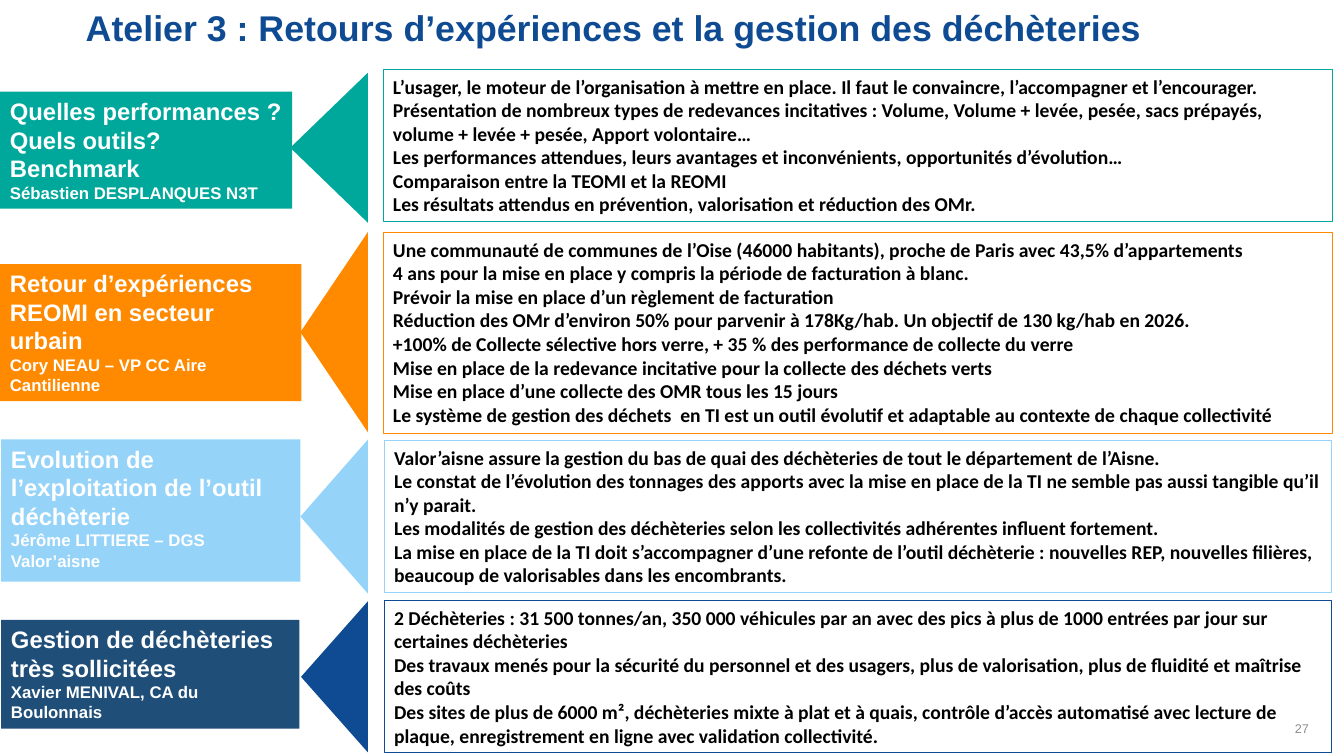
from copy import deepcopy
from pptx import Presentation
from pptx.dml.color import RGBColor as RGB
from pptx.enum.shapes import MSO_SHAPE as KIND
from pptx.enum.text import MSO_ANCHOR as ANCHOR, MSO_AUTO_SIZE as FIT, PP_ALIGN as ALIGN
from pptx.oxml.ns import qn
from pptx.util import Inches, Pt

WIDE, HIGH = Inches(13.33), Inches(7.5)

TEAL = RGB(0x00, 0xA8, 0x9C)
ORANGE = RGB(0xFF, 0x8A, 0x00)
SKY = RGB(0x95, 0xD3, 0xF9)
BLUE = RGB(0x0F, 0x4B, 0x93)
NAVY = RGB(0x1F, 0x4E, 0x79)
WHITE = RGB(0xFF, 0xFF, 0xFF)
BLACK = RGB(0x00, 0x00, 0x00)
GREY = RGB(0x8C, 0x8C, 0x8C)

TITLE = dict(name="Arial", size=Pt(25.5), bold=True)
TOPIC = dict(name="Arial", size=Pt(17), bold=True)
GUEST = dict(name="Arial", size=Pt(12), bold=True)
POINT = dict(name="Calibri", size=Pt(14), bold=True)
FOLIO = dict(name="Arial", size=Pt(9), bold=False)

BASE = 27.38

ROWS = [
    dict(tone=TEAL, shade=TEAL,
         tag=(0, 12.13, 21.75, 15.47), tip=(21.6, 9.6, 19.87),
         box=(28.5, 9.2, 70.65, 20.13),
         topic="Quelles performances ? Quels outils? Benchmark",
         guest="Sébastien DESPLANQUES N3T",
         points=[
             "L’usager, le moteur de l’organisation à mettre en place. Il faut le convaincre, "
             "l’accompagner et l’encourager.",
             "Présentation de nombreux types de redevances incitatives : Volume, Volume + levée, "
             "pesée, sacs prépayés, volume + levée + pesée, Apport volontaire…",
             "Les performances attendues, leurs avantages et inconvénients, opportunités d’évolution…",
             "Comparaison entre la TEOMI et la REOMI",
             "Les résultats attendus en prévention, valorisation et réduction des OMr.",
         ]),
    dict(tone=ORANGE, shade=ORANGE,
         tag=(0, 34.93, 22.43, 18.13), tip=(22.35, 30.67, 26.53),
         box=(28.5, 30.8, 70.65, 26.53),
         topic="Retour d’expériences REOMI en secteur urbain",
         guest="Cory NEAU – VP CC Aire Cantilienne",
         points=[
             "Une communauté de communes de l’Oise (46000 habitants), proche de Paris avec 43,5% "
             "d’appartements",
             "4 ans pour la mise en place y compris la période de facturation à blanc.",
             "Prévoir la mise en place d’un règlement de facturation",
             "Réduction des OMr d’environ 50% pour parvenir à 178Kg/hab. Un objectif de 130 kg/hab "
             "en 2026.",
             "+100% de Collecte sélective hors verre, + 35 % des performance de collecte du verre",
             "Mise en place de la redevance incitative pour la collecte des déchets verts",
             "Mise en place d’une collecte des OMR tous les 15 jours",
             "Le système de gestion des déchets  en TI est un outil évolutif et adaptable au "
             "contexte de chaque collectivité",
         ]),
    dict(tone=SKY, shade=SKY,
         tag=(0.08, 58.13, 22.28, 18.8), tip=(22.35, 58.13, 20.4),
         box=(28.58, 58.27, 70.5, 20.13),
         topic="Evolution de l’exploitation de l’outil déchèterie",
         guest="Jérôme LITTIERE – DGS Valor’aisne",
         points=[
             "Valor’aisne assure la gestion du bas de quai des déchèteries de tout le département "
             "de l’Aisne.",
             "Le constat de l’évolution des tonnages des apports avec la mise en place de la TI ne "
             "semble pas aussi tangible qu’il n’y parait.",
             "Les modalités de gestion des déchèteries selon les collectivités adhérentes influent "
             "fortement.\nLa mise en place de la TI doit s’accompagner d’une refonte de l’outil "
             "déchèterie : nouvelles REP, nouvelles filières, beaucoup de valorisables dans les "
             "encombrants.",
         ]),
    dict(tone=BLUE, shade=NAVY,
         tag=(0.08, 82, 22.2, 14.4), tip=(22.4, 79.53, 20),
         box=(28.58, 79.47, 70.5, 20.13),
         topic="Gestion de déchèteries très sollicitées",
         guest="Xavier MENIVAL, CA du Boulonnais",
         points=[
             "2 Déchèteries : 31 500 tonnes/an, 350 000 véhicules par an avec des pics à plus de "
             "1000 entrées par jour sur certaines déchèteries",
             "Des travaux menés pour la sécurité du personnel et des usagers, plus de valorisation, "
             "plus de fluidité et maîtrise des coûts",
             "Des sites de plus de 6000 m², déchèteries mixte à plat et à quais, contrôle d’accès "
             "automatisé avec lecture de plaque, enregistrement en ligne avec validation "
             "collectivité.",
         ]),
]


def area(x, y, w, h):
    return [round(WIDE * x / 100), round(HIGH * y / 100),
            round(WIDE * w / 100), round(HIGH * h / 100)]


def write(frame, lines, color, align=ALIGN.LEFT, anchor=ANCHOR.TOP, fit=FIT.NONE):
    frame.word_wrap = True
    frame.auto_size = fit
    frame.vertical_anchor = anchor
    for i, (text, style) in enumerate(lines):
        para = frame.add_paragraph() if i else frame.paragraphs[0]
        para.text = text
        para.alignment = align
        for run in para.runs:
            for key, value in style.items():
                setattr(run.font, key, value)
            run.font.color.rgb = color
        for gap in para._p.findall(qn("a:br")):
            gap.insert(0, deepcopy(para.runs[0]._r.rPr))


def draw(slide, kind, spot, fill=None, line=None):
    shape = slide.shapes.add_shape(kind, *spot)
    shape.shadow.inherit = False
    if fill is None:
        shape.fill.background()
    else:
        shape.fill.solid()
        shape.fill.fore_color.rgb = fill
    if line is None:
        shape.line.fill.background()
    else:
        shape.line.color.rgb = line
        shape.line.width = Pt(0.75)
    return shape


def arrow(slide, left, top, tall, fill):
    x, y, w, h = area(left, top, BASE - left, tall)
    spot = x + (w - h) // 2, y + (h - w) // 2, h, w
    draw(slide, KIND.ISOSCELES_TRIANGLE, spot, fill).rotation = 270


def band(slide, row):
    tag = draw(slide, KIND.RECTANGLE, area(*row["tag"]), row["shade"])
    write(tag.text_frame, [(row["topic"], TOPIC), (row["guest"], GUEST)], WHITE,
          fit=FIT.SHAPE_TO_FIT_TEXT)
    arrow(slide, *row["tip"], row["tone"])
    box = draw(slide, KIND.RECTANGLE, area(*row["box"]), line=row["tone"])
    write(box.text_frame, [(text, POINT) for text in row["points"]], BLACK,
          fit=FIT.SHAPE_TO_FIT_TEXT)


def head(slide, text):
    title = slide.shapes.title
    title.left, title.top, title.width, title.height = area(5.63, 1.2, 86.27, 8.27)
    write(title.text_frame, [(text, TITLE)], BLUE)
    title.text_frame.paragraphs[0].line_spacing = 0.8


def folio(slide, text):
    box = slide.shapes.add_textbox(*area(75.62, 94.67, 22.5, 3.33))
    write(box.text_frame, [(text, FOLIO)], GREY, ALIGN.RIGHT, ANCHOR.BOTTOM)


def main():
    deck = Presentation()
    deck.slide_width, deck.slide_height = WIDE, HIGH
    slide = deck.slides.add_slide(deck.slide_layouts[5])
    folio(slide, "27")
    for row in ROWS:
        band(slide, row)
    head(slide, "Atelier 3 : Retours d’expériences et la gestion des déchèteries")
    deck.save("out.pptx")


if __name__ == "__main__":
    main()
